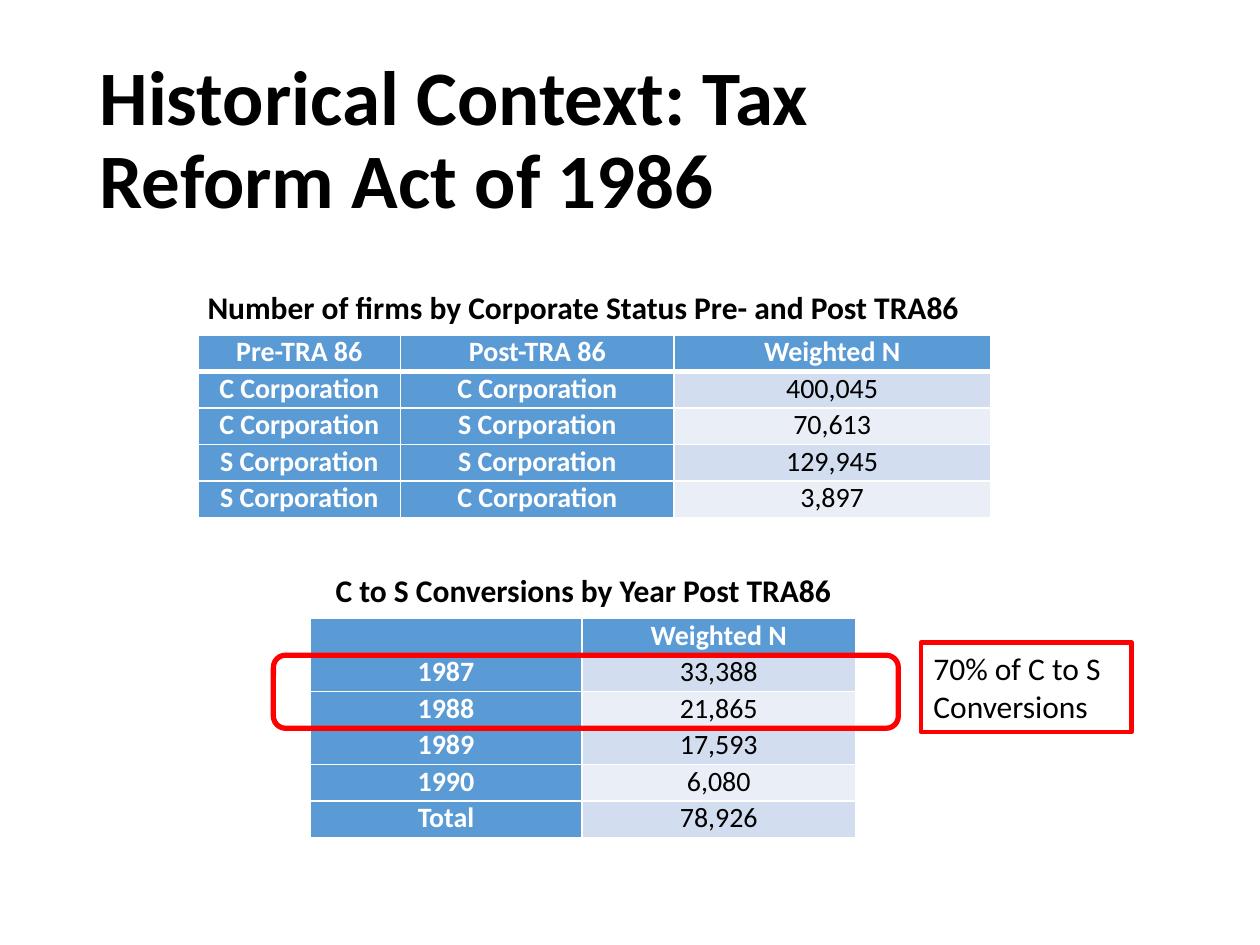
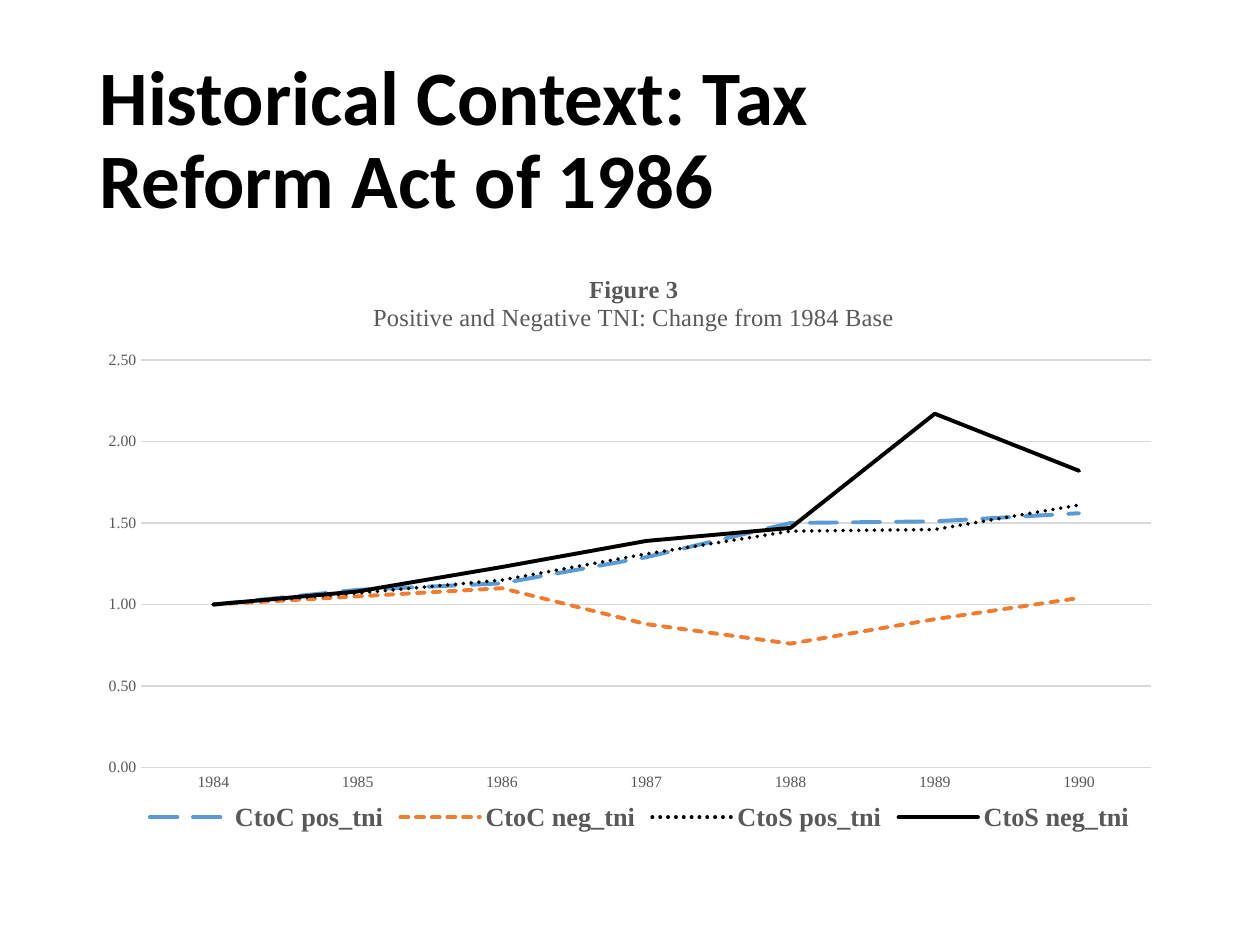
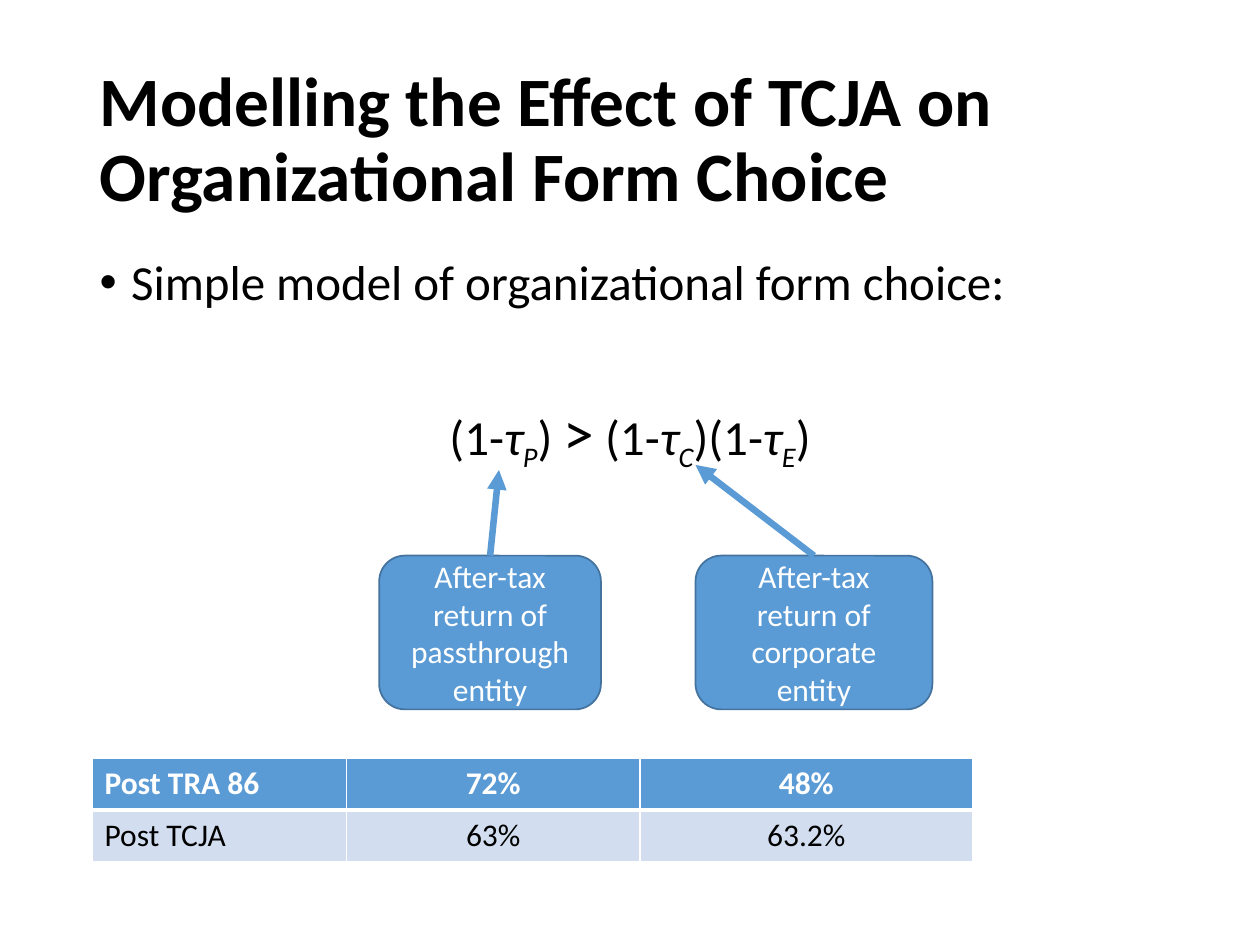
from lxml.etree import SubElement
from pptx import Presentation
from pptx.chart.data import CategoryChartData
from pptx.dml.color import RGBColor
from pptx.enum.chart import XL_CHART_TYPE, XL_LEGEND_POSITION, XL_TICK_MARK
from pptx.enum.dml import MSO_LINE
from pptx.enum.shapes import MSO_CONNECTOR, MSO_SHAPE
from pptx.enum.text import MSO_ANCHOR, MSO_AUTO_SIZE, PP_ALIGN
from pptx.oxml import parse_xml
from pptx.oxml.ns import nsdecls, qn
from pptx.util import Inches, Pt

BLACK, WHITE, RED, GREY, GRID = "000000", "FFFFFF", "FF0000", "595959", "D9D9D9"
BLUE, DARK_BLUE, ORANGE = "5B9BD5", "43739E", "ED7D31"
BANDS = ("D2DEEF", "EAEFF7")
SANS, SERIF = "Calibri", "Times New Roman"
TITLE_BOX = (0.69, 0.4, 7.41, 1.45)
CONTENT_BOX = (0.69, 2, 8.62, 4.76)

HISTORY_TITLE = "Historical Context: Tax Reform Act of 1986"
MODEL_TITLE = "Modelling the Effect of TCJA on Organizational Form Choice"

STATUS_CAPTION = "Number of firms by Corporate Status Pre- and Post TRA86"
STATUS_ROWS = [
    ("Pre-TRA 86", "Post-TRA 86", "Weighted N"),
    ("C Corporation", "C Corporation", "400,045"),
    ("C Corporation", "S Corporation", "70,613"),
    ("S Corporation", "S Corporation", "129,945"),
    ("S Corporation", "C Corporation", "3,897"),
]
YEAR_CAPTION = "C to S Conversions by Year Post TRA86"
YEAR_ROWS = [
    ("", "Weighted N"),
    ("1987", "33,388"),
    ("1988", "21,865"),
    ("1989", "17,593"),
    ("1990", "6,080"),
    ("Total", "78,926"),
]
SHARE_NOTE = "70% of C to S Conversions"
ROW_HEIGHT, YEAR_TOP = 0.29, 4.91
HIGHLIGHTED_ROWS = 2

FIGURE_TITLE = [("Figure 3", True), ("Positive and Negative TNI: Change from 1984 Base", False)]
YEARS = ["1984", "1985", "1986", "1987", "1988", "1989", "1990"]
TNI_SERIES = [
    ("CtoC pos_tni", (1, 1.09, 1.13, 1.29, 1.5, 1.51, 1.56), BLUE, MSO_LINE.LONG_DASH),
    ("CtoC neg_tni", (1, 1.05, 1.1, 0.88, 0.76, 0.91, 1.04), ORANGE, MSO_LINE.SQUARE_DOT),
    ("CtoS pos_tni", (1, 1.07, 1.15, 1.31, 1.45, 1.46, 1.61), BLACK, MSO_LINE.ROUND_DOT),
    ("CtoS neg_tni", (1, 1.08, 1.23, 1.39, 1.47, 2.17, 1.82), BLACK, MSO_LINE.SOLID),
]

MODEL_INTRO = "Simple model of organizational form choice:"
FORMULA = [
    ("(1-", "plain"), ("τ", "italic"), ("P", "sub"), (") ", "plain"), (">", "large"),
    (" (1-", "plain"), ("τ", "italic"), ("C", "sub"), (")(1-", "plain"),
    ("τ", "italic"), ("E", "sub"), (")", "plain"),
]
RETURNS = [
    ("After-tax return of passthrough entity", (3.01, 4.41, 1.76, 1.22), (3.96, 3.73)),
    ("After-tax return of corporate entity", (5.52, 4.41, 1.88, 1.22), (5.52, 3.69)),
]
RATE_ROWS = [("Post TRA 86", "72%", "48%"), ("Post TCJA", "63%", "63.2%")]


def color(hex_code):
    return RGBColor.from_string(hex_code)


def inches(values):
    return [Inches(value) for value in values]


def style(font, size, hex_code=BLACK, bold=False, name=SANS):
    font.size, font.name, font.bold = Pt(size), name, bold
    font.color.rgb = color(hex_code)


def outline(line, hex_code, width):
    line.color.rgb = color(hex_code)
    line.width = Pt(width)


def add_run(paragraph, text, size, hex_code=BLACK, bold=False):
    run = paragraph.add_run()
    run.text = text
    style(run.font, size, hex_code, bold)
    return run


def place(shape, box):
    shape.left, shape.top, shape.width, shape.height = inches(box)


def add_slide(deck, title, size=44, layout=5):
    slide = deck.slides.add_slide(deck.slide_layouts[layout])
    heading = slide.shapes.title
    place(heading, TITLE_BOX)
    frame = heading.text_frame
    frame.auto_size = MSO_AUTO_SIZE.NONE
    frame.vertical_anchor = MSO_ANCHOR.MIDDLE
    paragraph = frame.paragraphs[0]
    paragraph.alignment, paragraph.line_spacing = PP_ALIGN.LEFT, 0.9
    add_run(paragraph, title, size, bold=True)
    return slide


def add_text(slide, box, text, align=PP_ALIGN.LEFT, bold=False):
    label = slide.shapes.add_textbox(*inches(box))
    label.text_frame.word_wrap = True
    paragraph = label.text_frame.paragraphs[0]
    paragraph.alignment = align
    add_run(paragraph, text, 18, bold=bold)
    return label


def add_rounded(slide, box, line_color, width, fill=None):
    shape = slide.shapes.add_shape(MSO_SHAPE.ROUNDED_RECTANGLE, *inches(box))
    shape.shadow.inherit = False
    outline(shape.line, line_color, width)
    if fill:
        shape.fill.solid()
        shape.fill.fore_color.rgb = color(fill)
    else:
        shape.fill.background()
    return shape


def add_borders(cell, top, bottom):
    props = cell._tc.get_or_add_tcPr()
    for side, width in (("L", 1), ("R", 1), ("T", top), ("B", bottom)):
        props.append(parse_xml(
            f'<a:ln{side} {nsdecls("a")} w="{Pt(width)}"><a:solidFill>'
            f'<a:srgbClr val="{WHITE}"/></a:solidFill></a:ln{side}>'))


def add_grid(slide, left, top, rows, widths, row_height, size, label_columns=0, side_inset=None):
    height = row_height * len(rows)
    table = slide.shapes.add_table(
        len(rows), len(widths), *inches((left, top, sum(widths), height))).table
    for column, width in zip(table.columns, widths):
        column.width = Inches(width)
    for r, row in enumerate(rows):
        table.rows[r].height = Inches(row_height)
        for c, text in enumerate(row):
            cell = table.cell(r, c)
            header = r == 0 or c < label_columns
            add_borders(cell, 3 if r == 1 else 1, 3 if r == 0 else 1)
            cell.fill.solid()
            cell.fill.fore_color.rgb = color(BLUE if header else BANDS[(r - 1) % 2])
            paragraph = cell.text_frame.paragraphs[0]
            if side_inset:
                cell.margin_left = cell.margin_right = Inches(side_inset)
                cell.margin_top = cell.margin_bottom = 0
            if c or label_columns:
                paragraph.alignment = PP_ALIGN.CENTER
            add_run(paragraph, text, size, WHITE if header else BLACK, header)


def set_layout(parent, **fractions):
    layout = parent.find(qn("c:layout"))
    if layout is None:
        layout = parse_xml(f'<c:layout {nsdecls("c")}/>')
        leading = [child for child in parent if child.tag in (qn("c:tx"), qn("c:legendPos"))]
        parent.insert(len(leading), layout)
    manual = SubElement(layout, qn("c:manualLayout"))
    if "w" in fractions:
        SubElement(manual, qn("c:layoutTarget")).set("val", "inner")
    for mode in ("xMode", "yMode"):
        SubElement(manual, qn(f"c:{mode}")).set("val", "edge")
    for key, value in fractions.items():
        SubElement(manual, qn(f"c:{key}")).set("val", str(value))


def build_conversions(deck):
    slide = add_slide(deck, HISTORY_TITLE)
    add_grid(slide, 1.57, 2.66, STATUS_ROWS, (1.61, 2.17, 2.51), ROW_HEIGHT, 16, 2, 0.13)
    add_grid(slide, 2.46, YEAR_TOP, YEAR_ROWS, (2.16, 2.17), ROW_HEIGHT, 16, 1, 0.07)
    for caption, top in ((STATUS_CAPTION, 2.24), (YEAR_CAPTION, 4.48)):
        add_text(slide, (1.17, top, 6.92, 0.4), caption, PP_ALIGN.CENTER, True)
    highlight = (2.17, YEAR_TOP + ROW_HEIGHT, 4.96, HIGHLIGHTED_ROWS * ROW_HEIGHT)
    add_rounded(slide, highlight, RED, 3)
    share = add_text(slide, (7.31, 5.1, 1.67, 0.71), SHARE_NOTE)
    outline(share.line, RED, 2.75)


def build_tni_chart(deck):
    slide = add_slide(deck, HISTORY_TITLE)
    data = CategoryChartData(number_format="0.00")
    data.categories = YEARS
    for name, values, _, _ in TNI_SERIES:
        data.add_series(name, values)
    chart = slide.shapes.add_chart(XL_CHART_TYPE.LINE, *inches(CONTENT_BOX), data).chart
    style(chart.font, 10, name=SERIF)

    title = chart.chart_title
    for index, (text, bold) in enumerate(FIGURE_TITLE):
        frame = title.text_frame
        paragraph = frame.add_paragraph() if index else frame.paragraphs[0]
        run = paragraph.add_run()
        run.text = text
        style(run.font, 14, GREY, bold, SERIF)
    title.include_in_layout = False
    set_layout(title._element, x=0.26, y=0.03)
    set_layout(chart.plots[0]._element.getparent(), x=0.05, y=0.18, w=0.93, h=0.68)

    years, change = chart.category_axis, chart.value_axis
    for axis in (years, change):
        axis.major_tick_mark = axis.minor_tick_mark = XL_TICK_MARK.NONE
        style(axis.tick_labels.font, 9, GREY, name=SERIF)
    outline(years.format.line, GRID, 0.75)
    change.format.line.fill.background()
    change.minimum_scale, change.maximum_scale, change.major_unit = 0, 2.5, 0.5
    change.tick_labels.number_format = "0.00"
    change.tick_labels.number_format_is_linked = False
    outline(change.major_gridlines.format.line, GRID, 0.75)

    chart.has_legend = True
    chart.legend.position = XL_LEGEND_POSITION.BOTTOM
    chart.legend.include_in_layout = False
    style(chart.legend.font, 15, GREY, True, SERIF)
    set_layout(chart.legend._element, x=0.05, y=0.91)

    plot = chart.plots[0]
    plot.vary_by_categories = False
    for series, (_, _, hex_code, dash) in zip(plot.series, TNI_SERIES):
        series.smooth = False
        outline(series.format.line, hex_code, 2.25)
        series.format.line.dash_style = dash
        series._element.find(".//" + qn("a:ln")).set("cap", "rnd")


def set_bullet(paragraph, indent, tag, **attributes):
    props = paragraph._p.get_or_add_pPr()
    props.set("marL", str(Inches(indent)))
    props.set("indent", str(-Inches(indent)))
    bullet = SubElement(props, qn(tag))
    for key, value in attributes.items():
        bullet.set(key, value)


def add_return_arrow(slide, box, tip):
    x, y = inches(tip)
    arrow = slide.shapes.add_connector(MSO_CONNECTOR.STRAIGHT, box.left, box.top, x, y)
    arrow.begin_connect(box, 0)
    outline(arrow.line, BLUE, 3.75)
    props = arrow._element.spPr
    SubElement(props.find(qn("a:ln")), qn("a:tailEnd")).set("type", "triangle")
    SubElement(props, qn("a:effectLst"))


def build_model(deck):
    slide = add_slide(deck, MODEL_TITLE, 39.6, layout=1)
    body = slide.placeholders[1]
    place(body, CONTENT_BOX)
    frame = body.text_frame
    frame.auto_size = MSO_AUTO_SIZE.NONE
    intro, formula = frame.paragraphs[0], frame.add_paragraph()
    set_bullet(intro, 0.25, "a:buChar", char="•")
    set_bullet(formula, 0, "a:buNone")
    intro.line_spacing = formula.line_spacing = 0.9
    intro.space_before, formula.space_before = Pt(0), Pt(50)
    formula.alignment = PP_ALIGN.CENTER
    add_run(intro, MODEL_INTRO, 28)
    for text, kind in FORMULA:
        run = add_run(formula, text, 35 if kind == "large" else 28)
        run.font.italic = kind in ("italic", "sub")
        if kind == "sub":
            run._r.get_or_add_rPr().set("baseline", "-25000")

    boxes = []
    for text, position, _ in RETURNS:
        box = add_rounded(slide, position, DARK_BLUE, 1, BLUE)
        box.text_frame.word_wrap = True
        box.text_frame.vertical_anchor = MSO_ANCHOR.MIDDLE
        paragraph = box.text_frame.paragraphs[0]
        paragraph.alignment = PP_ALIGN.CENTER
        add_run(paragraph, text, 18, WHITE)
        boxes.append(box)
    for box, (_, _, tip) in zip(boxes, RETURNS):
        add_return_arrow(slide, box, tip)
    add_grid(slide, 0.73, 6.02, RATE_ROWS, (2.02, 2.33, 2.64), 0.41, 18)


def main():
    deck = Presentation()
    deck.slide_width, deck.slide_height = Inches(10), Inches(7.5)
    build_conversions(deck)
    build_tni_chart(deck)
    build_model(deck)
    deck.save("out.pptx")


if __name__ == "__main__":
    main()
